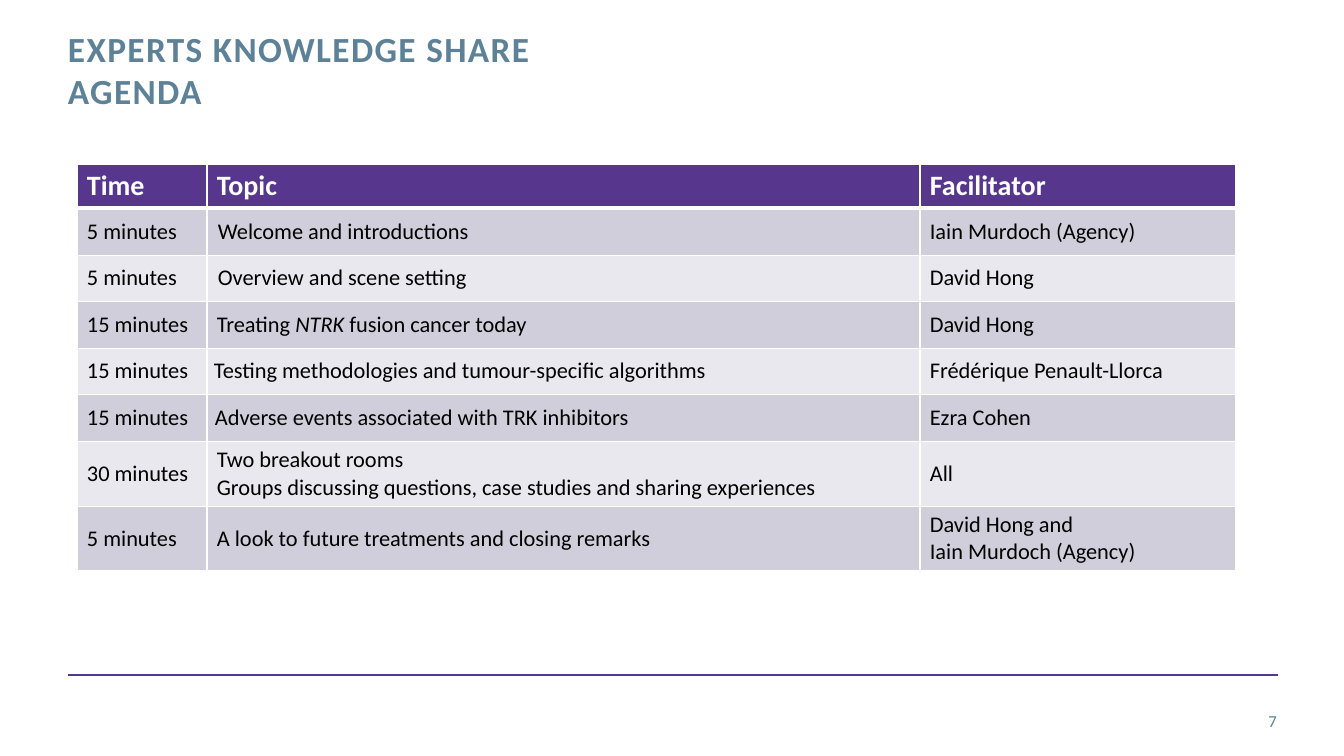
from itertools import pairwise

from lxml.etree import SubElement
from pptx import Presentation
from pptx.dml.color import RGBColor
from pptx.enum.shapes import MSO_CONNECTOR
from pptx.enum.text import MSO_ANCHOR, PP_ALIGN
from pptx.oxml import parse_xml
from pptx.oxml.ns import nsdecls, qn
from pptx.util import Pt

TITLE = "EXPERTS KNOWLEDGE SHARE\nAGENDA"
PAGE_NUMBER = "7"
HEADERS = ("Time", "Topic", "Facilitator")
AGENDA = [
    ("5 minutes", "Welcome and introductions", "Iain Murdoch (Agency)"),
    ("5 minutes", "Overview and scene setting", "David Hong"),
    ("15 minutes", "Treating *NTRK* fusion cancer today", "David Hong"),
    ("15 minutes", "Testing methodologies and tumour-specific algorithms", "Frédérique Penault-Llorca"),
    ("15 minutes", "Adverse events associated with TRK inhibitors", "Ezra Cohen"),
    ("30 minutes", "Two breakout rooms\nGroups discussing questions, case studies and sharing experiences", "All"),
    ("5 minutes", "A look to future treatments and closing remarks", "David Hong and\nIain Murdoch (Agency)"),
]
TOPIC_INSETS = (10, 11, 11, 10, 7, 8, 10, 10)
CELL_INSET = 10

COLUMN_EDGES = (77, 207, 920, 1236)
ROW_EDGES = (164, 208, 255, 301, 348, 394, 441, 506, 570)
TITLE_BOX = (68, 27, 964, 89)
NUMBER_BOX = (1159, 701, 118, 40)
RULE = (68, 675, 1278, 675)

THEME = {
    "font": "Calibri",
    "accent": "56378D",
    "heading": "5D8298",
    "text": "000000",
    "white": "FFFFFF",
    "bands": ("D1CEDB", "E9E8EE"),
    "title_size": 25.2,
    "header_size": 20,
    "body_size": 16,
    "number_size": 12,
}


def px(value):
    return round(value * 914400 / 100.8)


def apply(target, values):
    for name, value in values.items():
        setattr(target, name, value)


def write(text_frame, text, size, color, bold=False, spacing=0, align=PP_ALIGN.LEFT):
    paragraph = text_frame.paragraphs[0]
    paragraph.alignment = align
    for line_index, line in enumerate(text.split("\n")):
        if line_index:
            paragraph.add_line_break()
        for part_index, part in enumerate(line.split("*")):
            run = paragraph.add_run()
            run.text = part
            apply(run.font, {"name": THEME["font"], "size": Pt(size), "bold": bold, "italic": part_index % 2 == 1})
            run.font.color.rgb = RGBColor.from_string(color)
            if spacing:
                run.font._element.set("spc", str(spacing))


def add_text(slide, box, text, size, anchor=MSO_ANCHOR.TOP, **style):
    text_frame = slide.shapes.add_textbox(*map(px, box)).text_frame
    apply(text_frame, {
        "word_wrap": True, "vertical_anchor": anchor,
        "margin_left": 0, "margin_top": 0, "margin_right": 0, "margin_bottom": 0,
    })
    write(text_frame, text, size, THEME["heading"], **style)


def set_borders(cell, widths):
    properties = cell._tc.get_or_add_tcPr()
    for index, (side, width) in enumerate(widths.items()):
        border = parse_xml(
            f'<a:{side} {nsdecls("a")} w="{Pt(width)}"><a:solidFill>'
            f'<a:srgbClr val="{THEME["white"]}"/></a:solidFill></a:{side}>'
        )
        properties.insert(index, border)


def add_agenda(slide):
    rows = [HEADERS, *AGENDA]
    left, top = COLUMN_EDGES[0], ROW_EDGES[0]
    box = (left, top, COLUMN_EDGES[-1] - left, ROW_EDGES[-1] - top)
    table = slide.shapes.add_table(len(rows), len(HEADERS), *map(px, box)).table
    table.horz_banding = False
    for column, (start, end) in zip(table.columns, pairwise(COLUMN_EDGES)):
        column.width = px(end - start)
    for row, (start, end) in zip(table.rows, pairwise(ROW_EDGES)):
        row.height = px(end - start)
    for row_index, texts in enumerate(rows):
        header = row_index == 0
        fill = THEME["accent"] if header else THEME["bands"][(row_index - 1) % 2]
        size = THEME["header_size" if header else "body_size"]
        color = THEME["white" if header else "text"]
        for column_index, text in enumerate(texts):
            cell = table.cell(row_index, column_index)
            inset = TOPIC_INSETS[row_index] if column_index == 1 else CELL_INSET
            apply(cell, {
                "vertical_anchor": MSO_ANCHOR.TOP if header else MSO_ANCHOR.MIDDLE,
                "margin_left": px(inset), "margin_right": px(min(inset, CELL_INSET)),
                "margin_top": px(5), "margin_bottom": px(5),
            })
            cell.fill.solid()
            cell.fill.fore_color.rgb = RGBColor.from_string(fill)
            set_borders(cell, {
                "lnL": 1, "lnR": 1,
                "lnT": 3 if row_index == 1 else 1,
                "lnB": 3 if header else 1,
            })
            write(cell.text_frame, text, size, color, bold=header)


def add_rule(slide):
    rule = slide.shapes.add_connector(MSO_CONNECTOR.STRAIGHT, *map(px, RULE))
    rule.line.color.rgb = RGBColor.from_string(THEME["accent"])
    rule.line.width = Pt(2)
    SubElement(rule._element.spPr, qn("a:effectLst"))


def main():
    presentation = Presentation()
    apply(presentation, {"slide_width": px(1344), "slide_height": px(756)})
    slide = presentation.slides.add_slide(presentation.slide_layouts[6])
    add_rule(slide)
    add_agenda(slide)
    add_text(slide, TITLE_BOX, TITLE, THEME["title_size"], bold=True, spacing=100)
    add_text(slide, NUMBER_BOX, PAGE_NUMBER, THEME["number_size"], MSO_ANCHOR.MIDDLE, align=PP_ALIGN.RIGHT)
    presentation.save("out.pptx")


if __name__ == "__main__":
    main()
